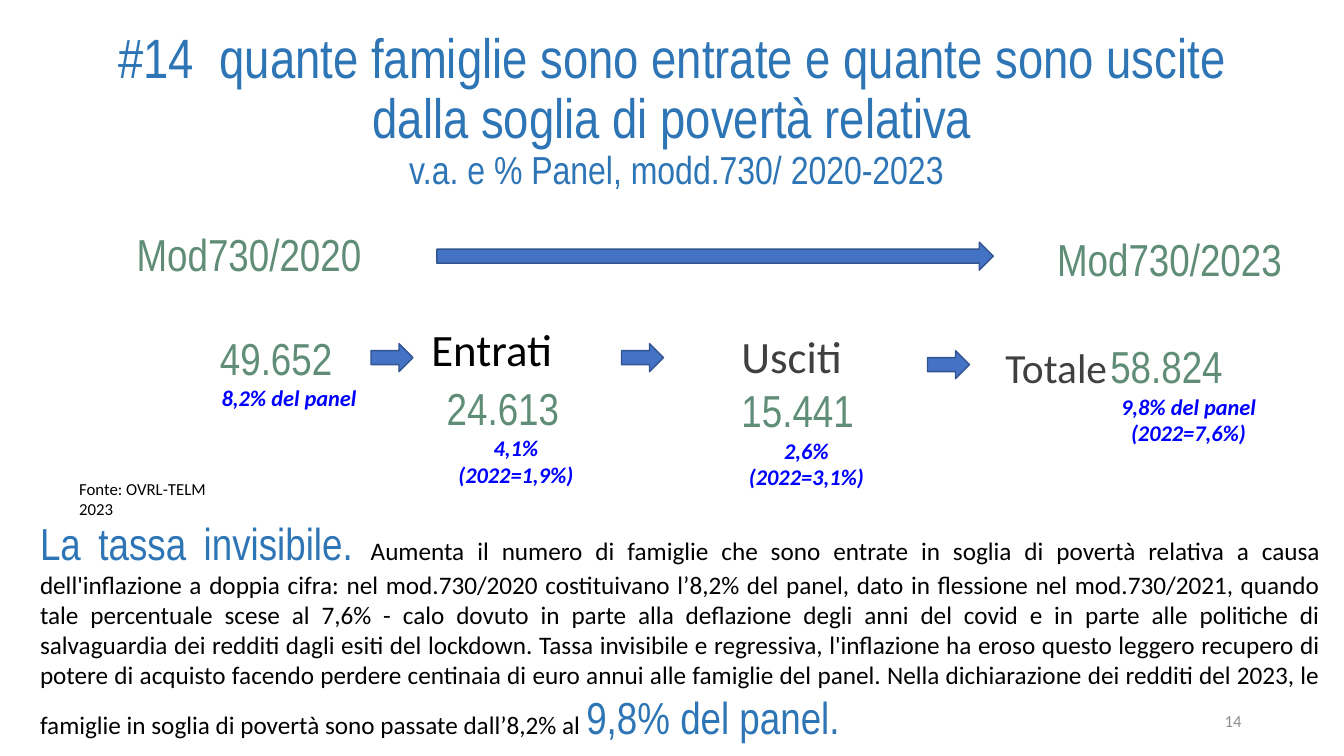
from pptx import Presentation
from pptx.dml.color import RGBColor
from pptx.enum import shapes, text
from pptx.util import Pt

HUES = {"blue": "2E75B6", "green": "608D78", "note": "0000FF", "ink": "000000",
        "dark": "404040", "grey": "8C8C8C", "fill": "4472C4", "edge": "325491"}
SLIM, BASE = "Arial Narrow", "Calibri"
LEFT, MID = text.PP_ALIGN.LEFT, text.PP_ALIGN.CENTER
RIGHT, FULL = text.PP_ALIGN.RIGHT, text.PP_ALIGN.JUSTIFY
TOP, CORE = text.MSO_ANCHOR.TOP, text.MSO_ANCHOR.MIDDLE


def tint(name):
    return RGBColor.from_string(HUES[name])


class Page:
    def __init__(self, deck):
        self.slide = deck.slides.add_slide(deck.slide_layouts[5])

    def run(self, para, words, size, hue, face=BASE, bold=False):
        run = para.add_run()
        run.text = words
        font = run.font
        font.size, font.name, font.color.rgb = Pt(size), face, tint(hue)
        if bold:
            font.bold = font.italic = True

    def para(self, frame, runs, first=False, align=LEFT, before=0, line=1.0):
        para = frame.paragraphs[0] if first else frame.add_paragraph()
        para.alignment, para.line_spacing = align, line
        para.space_before = Pt(before)
        for run in runs:
            self.run(para, *run)
        return para

    def title(self, box, head, sub):
        shape = self.slide.shapes.title
        shape.left, shape.top, shape.width, shape.height = map(Pt, box)
        frame = shape.text_frame
        frame.auto_size = text.MSO_AUTO_SIZE.NONE
        frame.word_wrap, frame.vertical_anchor = True, CORE
        para = self.para(frame, [(head, 39.6, "blue", SLIM)], True, MID, line=0.9)
        para.add_line_break()
        self.run(para, sub, 27.9, "blue", SLIM)

    def label(self, box, *runs, wrap=True, anchor=TOP, **style):
        frame = self.slide.shapes.add_textbox(*map(Pt, box)).text_frame
        frame.word_wrap, frame.vertical_anchor = wrap, anchor
        self.para(frame, runs, True, **style)
        return frame

    def figure(self, box, total, *notes):
        """A large green number with small centred notes below it."""
        frame = self.label(box, (total, 32, "green", SLIM))
        for note in notes:
            self.para(frame, [(note, 16, "note", BASE, True)], align=MID)

    def arrow(self, left, top, width=30):
        shape = self.slide.shapes.add_shape(
            shapes.MSO_SHAPE.RIGHT_ARROW, Pt(left), Pt(top), Pt(width), Pt(20))
        shape.shadow.inherit = False
        shape.fill.solid()
        shape.fill.fore_color.rgb = tint("fill")
        shape.line.color.rgb = tint("edge")
        shape.line.width = Pt(1)


def main():
    deck = Presentation()
    deck.slide_width, deck.slide_height = Pt(960), Pt(540)
    page = Page(deck)

    page.title((66, 20, 828, 119.5),
               "#14  quante famiglie sono entrate e quante sono uscite "
               "dalla soglia di povertà relativa",
               " v.a. e % Panel, modd.730/ 2020-2023")
    page.label((678, 500.5, 216, 29), ("14", 12, "grey"), anchor=CORE, align=RIGHT)

    for year, left, top in (("2020", 90.5, 158.5), ("2023", 748, 162)):
        page.label((left, top, 202, 39.5), ("Mod730/" + year, 32, "green", SLIM),
                   before=10)
    page.arrow(312, 173, 397.5)

    page.label((301, 230.5, 155, 39.5), ("Entrati", 32, "ink"), before=10, line=0.9)
    page.label((522.5, 231, 126, 119.5), ("Usciti", 32, "dark"), before=10)
    page.label((708.5, 240.5, 89.5, 39.5), ("Totale", 29.6, "dark"),
               align=RIGHT, before=10)

    page.figure((150, 232.5, 113, 39.5), "49.652", "8,2% del panel")
    page.figure((312, 268.5, 113, 83.5), "24.613", "4,1%", "(2022=1,9%)")
    page.figure((522.5, 270, 107, 39.5), "15.441", "2,6%", "(2022=3,1%)")
    page.figure((786, 238.5, 126, 78.5), "58.824", "9,8% del panel", "(2022=7,6%)")
    for left, top in ((265, 245.5), (444, 245.5), (662.5, 250.5)):
        page.arrow(left, top)

    page.label((49.5, 338.5, 128, 22), ("Fonte: OVRL-TELM 2023", 12, "ink"), wrap=False)
    page.label(
        (21.5, 364.5, 929, 172),
        ("La tassa invisibile. ", 32, "blue", SLIM),
        ("Aumenta il numero di famiglie che sono entrate in soglia di povertà relativa "
         "a causa dell'inflazione a doppia cifra: nel mod.730/2020 costituivano l’8,2% "
         "del panel, dato in flessione nel mod.730/2021, quando tale percentuale scese "
         "al 7,6% - calo dovuto in parte alla deflazione degli anni del covid e in parte "
         "alle politiche di salvaguardia dei redditi dagli esiti del lockdown. Tassa "
         "invisibile e regressiva, l'inflazione ha eroso questo leggero recupero di "
         "potere di acquisto facendo perdere centinaia di euro annui alle famiglie del "
         "panel. Nella dichiarazione dei redditi del 2023, le famiglie in soglia di "
         "povertà sono passate dall’8,2% al ", 18, "ink"),
        ("9,8% del panel.", 32, "blue", SLIM),
        align=FULL)

    deck.save("out.pptx")


if __name__ == "__main__":
    main()
